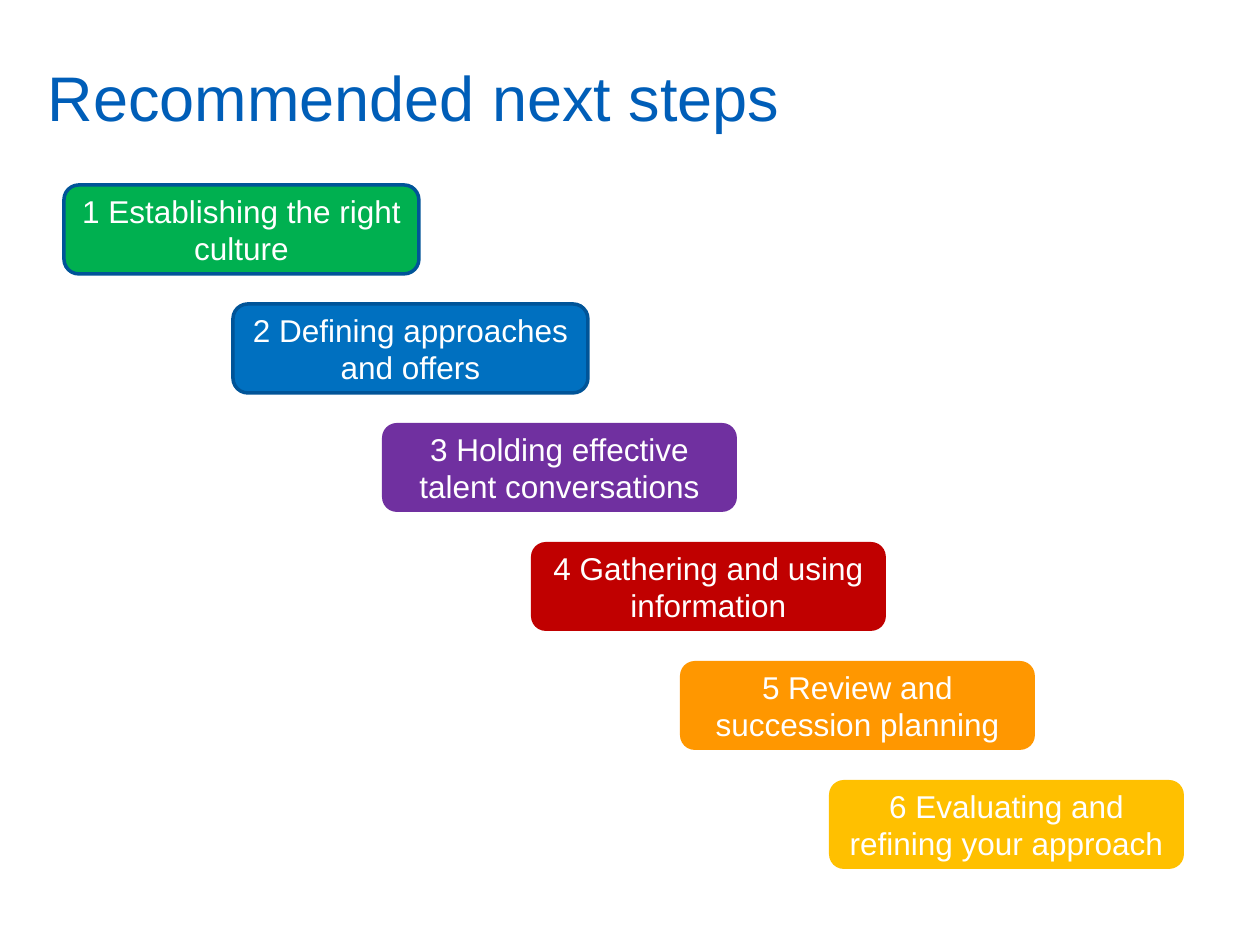
from dataclasses import dataclass

from pptx import Presentation
from pptx.dml.color import RGBColor
from pptx.enum.shapes import MSO_SHAPE
from pptx.enum.text import MSO_ANCHOR, MSO_AUTO_SIZE, PP_ALIGN
from pptx.util import Emu, Pt

ROUNDED = MSO_SHAPE.ROUNDED_RECTANGLE
MIDDLE = MSO_ANCHOR.MIDDLE
NO_AUTOFIT = MSO_AUTO_SIZE.NONE
LEFT, CENTER = PP_ALIGN.LEFT, PP_ALIGN.CENTER
TITLE_ONLY = 5
EMU_PER_PX = 914400 / 126


@dataclass(frozen=True)
class Theme:
    font: str = "Arial"
    title_size: int = 36
    step_size: int = 18
    title_color: str = "005EB8"
    step_text: str = "FFFFFF"
    outline: str = "005498"
    outline_width: int = 2


THEME = Theme()

# wording, fill, outlined
STEPS = [
    ("1 Establishing the right culture", "00B050", True),
    ("2 Defining approaches and offers", "0070C0", True),
    ("3 Holding effective talent conversations", "7030A0", False),
    ("4 Gathering and using information", "C00000", False),
    ("5 Review and succession planning", "FF9700", False),
    ("6 Evaluating and refining your approach", "FFC000", False),
]
STEP_WIDTH, STEP_HEIGHT = 355, 89
STAIR_LEFT, STAIR_TOP = 84, 185
STAIR_RUN, STAIR_DROP = 149, 119
FIRST_STEP_LEFT = 64  # the first step stands further out than the even run


def px(length):
    return Emu(round(length * EMU_PER_PX))


def write_text(shape, text, size, color, alignment):
    frame = shape.text_frame
    frame_format = {
        "word_wrap": True,
        "auto_size": NO_AUTOFIT,
        "vertical_anchor": MIDDLE,
    }
    for name, value in frame_format.items():
        setattr(frame, name, value)
    para = frame.paragraphs[0]
    para.alignment = alignment
    span = para.add_run()
    span.text = text
    for name, value in {"name": THEME.font, "size": Pt(size)}.items():
        setattr(span.font, name, value)
    span.font.color.rgb = RGBColor.from_string(color)


def set_title(slide, text):
    title = slide.shapes.title
    place = {"left": 35, "top": 37, "width": 1143, "height": 118}
    for name, value in place.items():
        setattr(title, name, px(value))
    write_text(title, text, THEME.title_size, THEME.title_color, LEFT)


def add_step(slide, left, top, text, fill, outlined):
    box = slide.shapes.add_shape(
        ROUNDED, px(left), px(top), px(STEP_WIDTH), px(STEP_HEIGHT))
    box.shadow.inherit = False
    box.fill.solid()
    box.fill.fore_color.rgb = RGBColor.from_string(fill)
    if outlined:
        box.line.color.rgb = RGBColor.from_string(THEME.outline)
        box.line.width = Pt(THEME.outline_width)
    else:
        box.line.fill.background()
    write_text(box, text, THEME.step_size, THEME.step_text, CENTER)


def main():
    deck = Presentation()
    deck.slide_width, deck.slide_height = px(1260), px(945)
    slide = deck.slides.add_slide(deck.slide_layouts[TITLE_ONLY])
    set_title(slide, "Recommended next steps")
    for index, step in enumerate(STEPS):
        left = STAIR_LEFT + index * STAIR_RUN if index else FIRST_STEP_LEFT
        add_step(slide, left, STAIR_TOP + index * STAIR_DROP, *step)
    deck.save("out.pptx")


if __name__ == "__main__":
    main()
